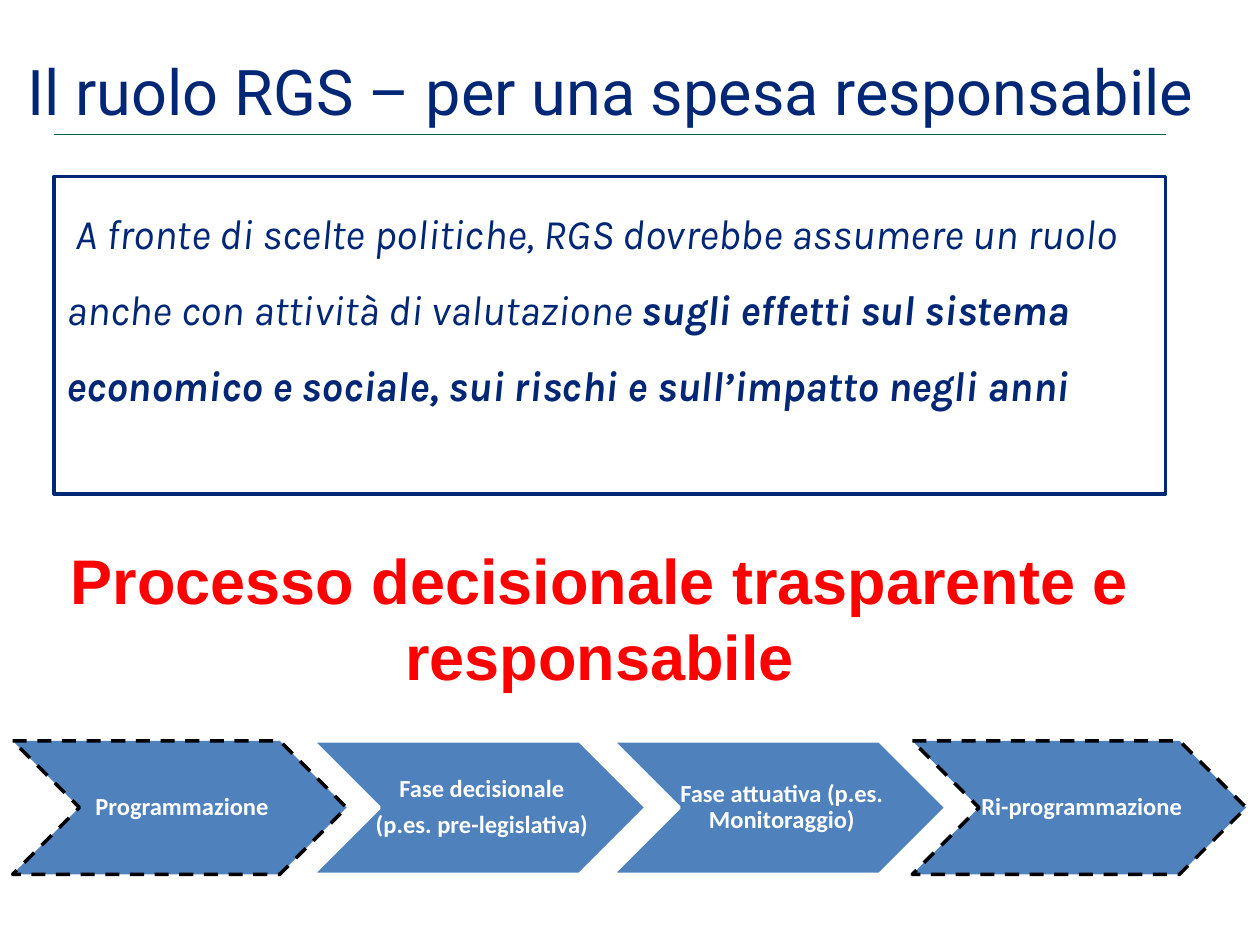
"""Build the slide on the role of RGS in responsible spending."""
from dataclasses import dataclass

from lxml.etree import SubElement
from pptx import Presentation
from pptx.dml.color import RGBColor
from pptx.enum.dml import MSO_LINE
from pptx.enum.shapes import MSO_CONNECTOR, MSO_SHAPE
from pptx.enum.text import MSO_ANCHOR, PP_ALIGN
from pptx.oxml.ns import qn
from pptx.util import Inches, Pt


@dataclass(frozen=True)
class Theme:
    """Colours, fonts and type sizes."""
    navy: str = "002776"
    green: str = "006442"
    red: str = "FF0000"
    blue: str = "4F81BD"
    white: str = "FFFFFF"
    black: str = "000000"
    title_font: str = "Roboto"
    body_font: str = "Karla"
    slogan_font: str = "Arial"
    step_font: str = "Calibri"
    heading: int = 36
    body: int = 24
    step: int = 14


def apply(target, values):
    """Set every attribute in values on target."""
    for name, value in values.items():
        setattr(target, name, value)


def stroke(line, color, width, dash=None):
    """Format an outline or a connector line."""
    line.color.rgb = RGBColor.from_string(color)
    line.width = Pt(width)
    if dash:
        line.dash_style = dash


class SlideBuilder:
    """Hold the theme and the current page and draw its elements."""

    def __init__(self, page, theme):
        """Keep the page and the theme."""
        self.page = page
        self.theme = theme

    def rule(self, left, top, right, color, width):
        """Draw a horizontal line."""
        line = self.page.shapes.add_connector(
            MSO_CONNECTOR.STRAIGHT, *map(Inches, (left, top, right, top)))
        stroke(line.line, color, width)
        SubElement(line._element.spPr, qn("a:effectLst"))

    def shape(self, kind, area, fill, outline):
        """Draw a filled preset shape."""
        shape = self.page.shapes.add_shape(kind, *map(Inches, area))
        shape.shadow.inherit = False
        shape.fill.solid()
        shape.fill.fore_color.rgb = RGBColor.from_string(fill)
        stroke(shape.line, *outline)
        return shape

    def text(self, area, paragraphs, font, **formats):
        """Add a text box."""
        box = self.page.shapes.add_textbox(*map(Inches, area))
        self.fill_text(box, paragraphs, font, **formats)

    def fill_text(self, box, paragraphs, font, color, para_format=None, frame_format=None):
        """Fill a box with paragraphs of (text, bold) spans."""
        frame = box.text_frame
        apply(frame, {"word_wrap": True, "vertical_anchor": MSO_ANCHOR.TOP,
                      **(frame_format or {})})
        for index, spans in enumerate(paragraphs):
            para = frame.add_paragraph() if index else frame.paragraphs[0]
            apply(para, {"alignment": PP_ALIGN.LEFT, **(para_format or {})})
            for text, bold in spans:
                span = para.add_run()
                span.text = text
                apply(span.font, {**font, "bold": bold})
                span.font.color.rgb = RGBColor.from_string(color)

    def step(self, area, lines, outline):
        """Draw a process chevron with its label."""
        theme = self.theme
        self.shape(MSO_SHAPE.CHEVRON, area, theme.blue, outline)
        self.text(
            area, [[(line, True)] for line in lines],
            {"name": theme.step_font, "size": Pt(theme.step)}, color=theme.white,
            para_format={"alignment": PP_ALIGN.CENTER, "line_spacing": 0.9,
                         "space_after": Pt(5)},
            frame_format={"vertical_anchor": MSO_ANCHOR.MIDDLE,
                          "margin_left": Inches(0.06), "margin_right": Inches(0.02),
                          "margin_top": Inches(0.02), "margin_bottom": Inches(0.02)})


def main():
    """Build and save the deck."""
    deck = Presentation()
    apply(deck, {"slide_width": Inches(10), "slide_height": Inches(7.5)})
    theme = Theme()
    builder = SlideBuilder(deck.slides.add_slide(deck.slide_layouts[6]), theme)

    builder.rule(0.43, 1.07, 9.25, theme.green, 0.75)
    builder.text((0.12, 0.37, 9.88, 0.71),
                 [[("Il ruolo RGS – per una spesa responsabile", False)]],
                 {"name": theme.title_font, "size": Pt(theme.heading)}, color=theme.navy)

    statement = builder.shape(MSO_SHAPE.RECTANGLE, (0.43, 1.4, 8.82, 2.52),
                              theme.white, (theme.navy, 2))
    builder.fill_text(
        statement,
        [[(" A fronte di scelte politiche, RGS dovrebbe assumere un ruolo "
           "anche con attività di valutazione ", False),
          ("sugli effetti sul sistema economico e sociale, "
           "sui rischi e sull’impatto negli anni", True)]],
        {"name": theme.body_font, "size": Pt(theme.body), "italic": True},
        color=theme.navy, para_format={"line_spacing": 1.5})

    builder.text((0.43, 4.25, 8.66, 1.31),
                 [[("Processo decisionale trasparente e responsabile", True)]],
                 {"name": theme.slogan_font, "size": Pt(theme.heading)}, color=theme.red,
                 para_format={"alignment": PP_ALIGN.CENTER})

    dashed = (theme.black, 2, MSO_LINE.DASH)
    plain = (theme.white, 2)
    steps = [
        (["Programmazione"], dashed),
        (["Fase decisionale", "(p.es. pre-legislativa)"], plain),
        (["Fase attuativa (p.es. Monitoraggio)"], plain),
        (["Ri-programmazione"], dashed),
    ]
    for index, (lines, outline) in enumerate(steps):
        builder.step((0.1 + 2.38 * index, 5.88, 2.65, 1.06), lines, outline)

    deck.save("out.pptx")


if __name__ == "__main__":
    main()
